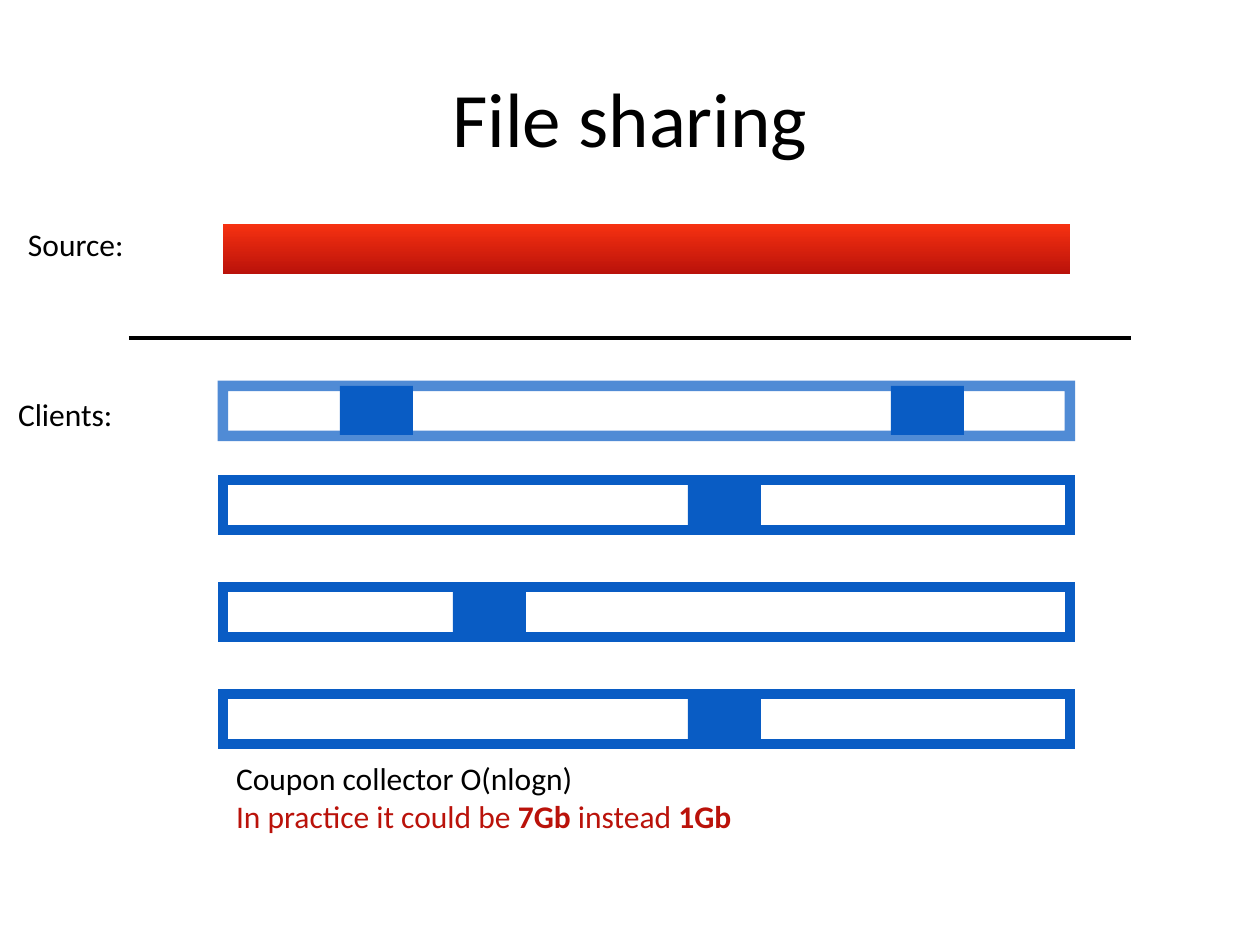
from lxml import etree
from pptx import Presentation
from pptx.dml.color import RGBColor
from pptx.enum.shapes import MSO_CONNECTOR, MSO_SHAPE
from pptx.enum.text import MSO_ANCHOR, PP_ALIGN
from pptx.oxml.ns import qn
from pptx.util import Pt

PX = 914400 / 126
RECTANGLE = MSO_SHAPE.RECTANGLE
STRAIGHT = MSO_CONNECTOR.STRAIGHT
MIDDLE = MSO_ANCHOR.MIDDLE
CENTER = PP_ALIGN.CENTER

BLACK = RGBColor(0x00, 0x00, 0x00)
WHITE = RGBColor(0xFF, 0xFF, 0xFF)
BLUE = RGBColor(0x09, 0x5C, 0xC4)
BRIGHT_RED = RGBColor(0xF6, 0x31, 0x11)
DARK_RED = RGBColor(0xBA, 0x12, 0x0A)

BAR_LEFT, BAR_WIDTH, BAR_HEIGHT = 223, 847, 50
CHUNK_WIDTH, CHUNK_HEIGHT = 73, 49


def px(*lengths):
    """Turn pixel lengths into a list of EMU."""
    return [round(length * PX) for length in lengths]


def write(paragraph, text, size=18, color=BLACK, bold=False):
    run = paragraph.add_run()
    run.text = text
    run.font.name = "Calibri"
    run.font.size = Pt(size)
    run.font.color.rgb = color
    run.font.bold = bold


prs = Presentation()
prs.slide_width, prs.slide_height = px(1260, 945)
slide = prs.slides.add_slide(prs.slide_layouts[5])
shapes = slide.shapes

# Title
title = shapes.title
title.left, title.top, title.width, title.height = px(63, 38, 1134, 158)
title.text_frame.vertical_anchor = MIDDLE
heading = title.text_frame.paragraphs[0]
heading.alignment = CENTER
write(heading, "File sharing", size=44)

# Divider between the source and its clients
divider = shapes.add_connector(STRAIGHT, *px(129, 338, 1131, 338))
divider.line.color.rgb = BLACK
divider.line.width = Pt(2)
etree.SubElement(divider._element.spPr, qn("a:effectLst"))

# Client bars: top, opacity of the border in percent, lefts of received chunks
clients = [
    (386, 71, (340, 891)),
    (480, 100, (688,)),
    (587, 100, (453,)),
    (694, 100, (688,)),
]
for top, opacity, chunk_lefts in clients:
    bar = shapes.add_shape(RECTANGLE, *px(BAR_LEFT, top, BAR_WIDTH, BAR_HEIGHT))
    bar.shadow.inherit = False
    bar.line.color.rgb = BLUE
    bar.line.width = Pt(6)
    border = bar.line._get_or_add_ln()
    etree.SubElement(border, qn("a:miter"), lim="800000")
    if opacity < 100:
        bar.fill.background()
        border_color = border.find(".//" + qn("a:srgbClr"))
        etree.SubElement(border_color, qn("a:alpha"), val=str(opacity * 1000))
    else:
        bar.fill.solid()
        bar.fill.fore_color.rgb = WHITE
    for left in chunk_lefts:
        chunk = shapes.add_shape(RECTANGLE, *px(left, top, CHUNK_WIDTH, CHUNK_HEIGHT))
        chunk.shadow.inherit = False
        chunk.fill.solid()
        chunk.fill.fore_color.rgb = BLUE
        chunk.line.fill.background()

# Source bar
source = shapes.add_shape(RECTANGLE, *px(BAR_LEFT, 224, BAR_WIDTH, BAR_HEIGHT))
source.shadow.inherit = False
source.line.fill.background()
source.fill.gradient()
source.fill.gradient_angle = 270
for stop, color, position in zip(source.fill.gradient_stops, (BRIGHT_RED, DARK_RED), (0, 1)):
    stop.color.rgb = color
    stop.position = position

# Row labels and the closing remark: box and paragraphs of (text, format) runs
remark = [
    ("In practice it could be ", False),
    ("7Gb", True),
    (" instead ", False),
    ("1Gb", True),
]
captions = [
    ((23, 212, 163, 63), [[("Source:", {})]]),
    ((13, 382, 159, 63), [[("Clients:", {})]]),
    ((231, 738, 799, 117), [
        [("Coupon collector O(nlogn)", {})],
        [(text, {"color": DARK_RED, "bold": bold}) for text, bold in remark],
    ]),
]
for box, paragraphs in captions:
    frame = shapes.add_textbox(*px(*box)).text_frame
    frame.word_wrap = True
    frame.vertical_anchor = MIDDLE
    inset, = px(5)
    frame.margin_left = frame.margin_right = inset
    frame.margin_top = frame.margin_bottom = inset
    for index, runs in enumerate(paragraphs):
        paragraph = frame.add_paragraph() if index else frame.paragraphs[0]
        for text, style in runs:
            write(paragraph, text, **style)

prs.save("out.pptx")
